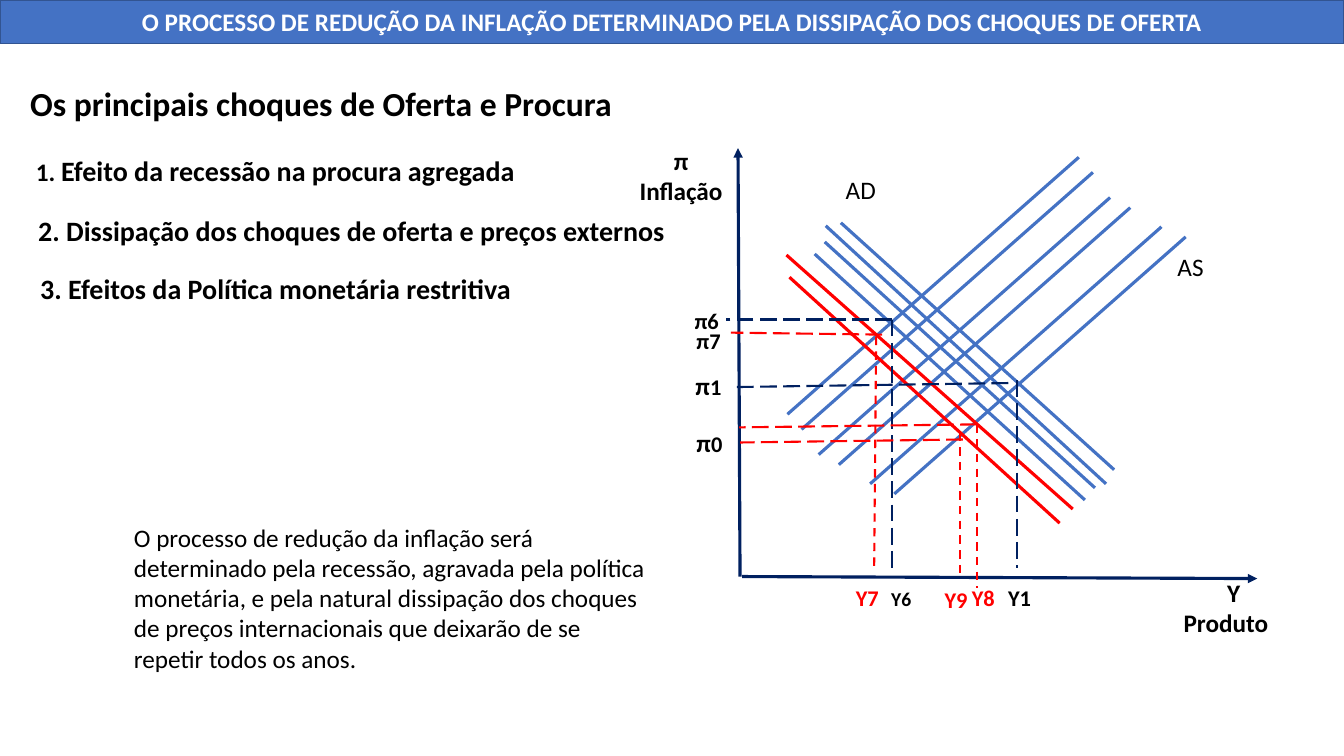
from dataclasses import dataclass

from lxml.etree import SubElement
from pptx import Presentation
from pptx.dml.color import RGBColor
from pptx.enum.dml import MSO_LINE_DASH_STYLE as Dash
from pptx.enum.shapes import MSO_CONNECTOR, MSO_SHAPE
from pptx.enum.text import MSO_ANCHOR, PP_ALIGN
from pptx.oxml.ns import qn
from pptx.util import Inches, Pt


@dataclass(frozen=True)
class Theme:
    font: str = "Calibri"
    blue: str = "4472C4"
    border: str = "325491"
    navy: str = "002060"
    red: str = "FF0000"
    black: str = "000000"
    white: str = "FFFFFF"
    title: int = 24
    item: int = 20
    body: int = 18
    label: int = 16
    small: int = 14
    solid: float = 2.25
    guide: float = 1.5


THEME = Theme()

AS_STARTS = [(7.81, 4.11), (7.95, 4.26), (8.12, 4.51),
             (8.32, 4.61), (8.63, 4.8), (8.87, 4.9)]
AS_RUN, AS_RISE = 2.89, 2.55

AD_CURVES = [
    (8.34, 2.21, 11.05, 4.66, THEME.blue),
    (8.19, 2.24, 10.97, 4.8, THEME.blue),
    (8.18, 2.4, 10.86, 4.84, THEME.blue),
    (8.08, 2.52, 10.76, 4.96, THEME.blue),
    (7.8, 2.53, 10.64, 5.05, THEME.red),
    (7.83, 2.75, 10.51, 5.19, THEME.red),
]

GUIDES = [
    (10.09, 3.77, 10.09, 5.64, THEME.navy, Dash.LONG_DASH),
    (10, 3.8, 7.3, 3.84, THEME.navy, Dash.LONG_DASH),
    (8.85, 3.17, 8.85, 5.68, THEME.navy, Dash.LONG_DASH),
    (8.85, 3.17, 7.2, 3.17, THEME.navy, Dash.LONG_DASH),
    (8.69, 3.34, 8.67, 5.66, THEME.red, Dash.DASH),
    (8.75, 3.32, 7.25, 3.3, THEME.red, Dash.LONG_DASH),
    (9.69, 4.21, 9.69, 5.83, THEME.red, Dash.DASH),
    (9.69, 4.21, 7.33, 4.24, THEME.red, Dash.LONG_DASH),
    (9.52, 4.29, 9.52, 5.7, THEME.red, Dash.DASH),
    (9.55, 4.36, 7.34, 4.39, THEME.red, Dash.LONG_DASH),
]

OUTPUT_LABELS = [
    ("Y7", 8.39, 5.75, THEME.label, THEME.red),
    ("Y6", 8.74, 5.77, THEME.small, THEME.black),
    ("Y9", 9.27, 5.77, THEME.label, THEME.red),
    ("Y8", 9.54, 5.75, THEME.label, THEME.red),
    ("Y1", 9.9, 5.75, THEME.label, THEME.black),
]

INFLATION_LABELS = [
    ("6", 6.79, 3, THEME.label),
    ("7", 6.81, 3.2, THEME.label),
    ("1", 6.8, 3.62, THEME.body),
    ("0", 6.81, 4.19, THEME.body),
]


def rgb(color):
    return RGBColor.from_string(color)


def add_run(paragraph, text, size, color=THEME.black, bold=True):
    run = paragraph.add_run()
    run.text = text
    run.font.name = THEME.font
    run.font.size = Pt(size)
    run.font.bold = bold
    run.font.color.rgb = rgb(color)


def add_text(slide, box, *paragraphs, color=THEME.black, bold=True, wrap=True):
    """Each paragraph is a list of (text, size) runs."""
    frame = slide.shapes.add_textbox(*map(Inches, box)).text_frame
    frame.word_wrap = wrap
    for index, runs in enumerate(paragraphs):
        paragraph = frame.add_paragraph() if index else frame.paragraphs[0]
        for text, size in runs:
            add_run(paragraph, text, size, color, bold)
    return frame


def add_line(slide, ends, color, width=THEME.solid, dash=None, arrow=False):
    connector = slide.shapes.add_connector(MSO_CONNECTOR.STRAIGHT, *map(Inches, ends))
    connector.line.color.rgb = rgb(color)
    connector.line.width = Pt(width)
    if dash:
        connector.line.dash_style = dash
    if arrow:
        SubElement(connector.line._get_or_add_ln(), qn("a:tailEnd"), type="triangle")
    SubElement(connector._element.spPr, qn("a:effectLst"))


def add_banner(slide, text):
    banner = slide.shapes.add_shape(MSO_SHAPE.RECTANGLE, *map(Inches, (0, 0, 13.33, 0.43)))
    banner.shadow.inherit = False
    banner.fill.solid()
    banner.fill.fore_color.rgb = rgb(THEME.blue)
    banner.line.color.rgb = rgb(THEME.border)
    banner.line.width = Pt(1)
    banner.text_frame.vertical_anchor = MSO_ANCHOR.MIDDLE
    paragraph = banner.text_frame.paragraphs[0]
    paragraph.alignment = PP_ALIGN.CENTER
    add_run(paragraph, text, THEME.body, THEME.white)


def add_shock_list(slide):
    heading = add_text(
        slide, (0.2, 0.77, 6.39, 1.14),
        [("Os principais choques de Oferta e Procura", THEME.title)],
        [(" 1. ", THEME.body), ("Efeito da recessão na procura agregada", THEME.item)])
    heading.paragraphs[1].space_before = Pt(22)
    add_text(slide, (0.28, 2.07, 6.47, 0.44),
             [("2. Dissipação dos choques de oferta e preços externos", THEME.item)], wrap=False)
    add_text(slide, (0.3, 2.64, 5.2, 0.44),
             [("3. Efeitos da Política monetária restritiva", THEME.item)])


def add_conclusion(slide):
    text = ("O processo de redução da inflação será determinado pela recessão, "
            "agravada pela política monetária, e pela natural dissipação dos choques "
            "de preços internacionais que deixarão de se repetir todos os anos.")
    add_text(slide, (1.23, 5.13, 5.32, 1.62), [(text, THEME.body)], bold=False)


def add_curves(slide):
    add_line(slide, (7.34, 5.72, 7.32, 1.47), THEME.navy, arrow=True)
    add_line(slide, (7.36, 5.72, 12.47, 5.74), THEME.navy, arrow=True)
    for x, y in AS_STARTS:
        add_line(slide, (x, y, x + AS_RUN, y - AS_RISE), THEME.blue)
    for *ends, color in AD_CURVES:
        add_line(slide, ends, color)
    for *ends, color, dash in GUIDES:
        add_line(slide, ends, color, THEME.guide, dash)


def add_chart_labels(slide):
    inflation = add_text(slide, (6.23, 1.39, 1.05, 0.71),
                         [("π", THEME.body)], [("Inflação", THEME.body)])
    for paragraph in inflation.paragraphs:
        paragraph.alignment = PP_ALIGN.CENTER
    output = add_text(slide, (11.64, 5.68, 1.19, 0.71),
                      [("Y", THEME.body)], [("Produto", THEME.body)])
    output.paragraphs[0].alignment = PP_ALIGN.CENTER
    add_text(slide, (8.29, 1.68, 0.5, 0.4), [("AD", THEME.body)], bold=False, wrap=False)
    add_text(slide, (11.58, 2.44, 0.47, 0.4), [("AS", THEME.body)], bold=False)
    for text, left, top, size, color in OUTPUT_LABELS:
        add_text(slide, (left, top, 0.48, 0.37), [(text, size)], color=color)
    for number, left, top, size in INFLATION_LABELS:
        add_text(slide, (left, top, 0.6, 0.4), [("π", size), (number, THEME.label)])


def main():
    presentation = Presentation()
    presentation.slide_width = Inches(13.33)
    presentation.slide_height = Inches(7.5)
    slide = presentation.slides.add_slide(presentation.slide_layouts[6])
    add_banner(slide, "O PROCESSO DE REDUÇÃO DA INFLAÇÃO DETERMINADO "
                      "PELA DISSIPAÇÃO DOS CHOQUES DE OFERTA")
    add_shock_list(slide)
    add_curves(slide)
    add_chart_labels(slide)
    add_conclusion(slide)
    presentation.save("out.pptx")


if __name__ == "__main__":
    main()
